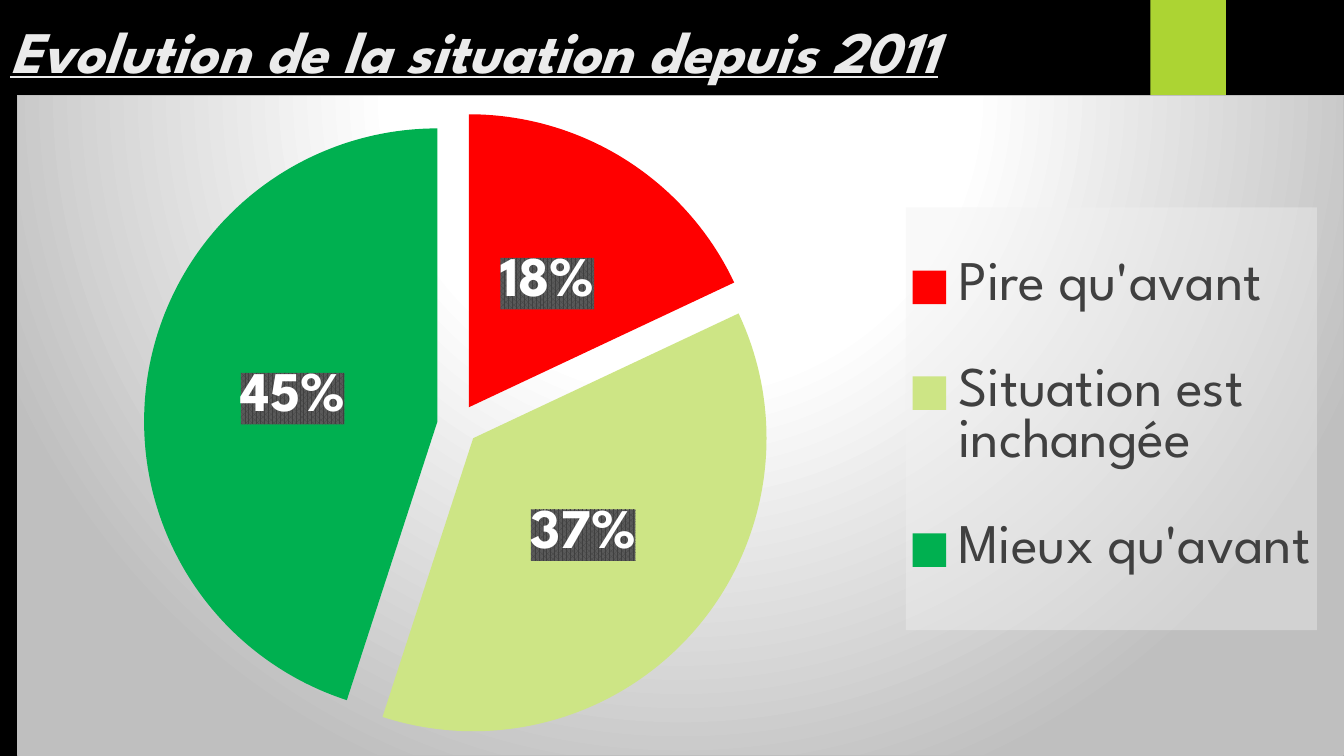
from lxml import etree
from pptx import Presentation
from pptx.chart.data import CategoryChartData
from pptx.dml.color import RGBColor
from pptx.enum.chart import XL_CHART_TYPE, XL_LABEL_POSITION, XL_LEGEND_POSITION
from pptx.enum.shapes import MSO_SHAPE
from pptx.enum.text import MSO_ANCHOR, PP_ALIGN
from pptx.oxml import parse_xml
from pptx.util import Inches, Pt

PIE, RECT = XL_CHART_TYPE.PIE, MSO_SHAPE.RECTANGLE
RIGHT, CENTER = XL_LEGEND_POSITION.RIGHT, XL_LABEL_POSITION.CENTER
LEFT, MIDDLE = PP_ALIGN.LEFT, MSO_ANCHOR.MIDDLE

# Content
TITLE = "Evolution de la situation depuis 2011"
SERIES = "Series 1"
SLICES = [
    ("Pire qu'avant", 18, "FF0000"),
    ("Situation est inchangée", 37, "CDE585"),
    ("Mieux qu'avant", 45, "00B050"),
]

# Theme
THEME = {
    "font": "League Spartan", "back": "000000", "title": "EBEBEB",
    "bar": "ACD433", "label": "FFFFFF", "legend": "404040",
    "big": 42, "text": 40,
}

# Places: slide boxes in inches, chart parts as shares of the chart
WIDE, HIGH = 13.33, 7.5
HEAD = (0, 0, WIDE, 1.14)
BAR = (11.41, 0, 0.75, 1.25)
CHART = (0.17, 0.94, WIDE - 0.17, HIGH - 0.94)
PLOT = (0.095, 0.024, 0.474, 0.95)
KEY = (0.67, 0.17, 0.31, 0.64)
BURST = 7

NS = ('xmlns:a="http://schemas.openxmlformats.org/drawingml/2006/main" '
      'xmlns:c="http://schemas.openxmlformats.org/drawingml/2006/chart"')


def box(area):
    return [Inches(n) for n in area]


def color(name):
    return RGBColor.from_string(THEME[name])


def style(font, name, size, bold=False):
    font.name, font.size, font.bold = THEME["font"], Pt(THEME[size]), bold
    font.color.rgb = color(name)


def solid(code, alpha=100):
    return (f'<a:solidFill><a:srgbClr val="{code}"><a:alpha val="{alpha * 1000}"/>'
            '</a:srgbClr></a:solidFill>')


def look(fill):
    return parse_xml(f'<c:spPr {NS}>{fill}</c:spPr>')


def layout(area, inner=False):
    node = parse_xml(f'<c:layout {NS}><c:manualLayout/></c:layout>')
    tags = [("layoutTarget", "inner")] if inner else []
    tags += [("xMode", "edge"), ("yMode", "edge"), *zip("xywh", area)]
    for tag, val in tags:
        part = etree.SubElement(node[0], node.tag.replace("layout", tag))
        part.set("val", str(val))
    return node


def place(parent, node, after):
    for old in parent.findall(node.tag):
        parent.remove(old)
    if after is None:
        parent.insert(0, node)
    else:
        after.addnext(node)


def add_head(slide):
    bar = slide.shapes.add_shape(RECT, *box(BAR))
    bar.shadow.inherit = False
    bar.fill.solid()
    bar.fill.fore_color.rgb = color("bar")
    bar.line.fill.background()

    head = slide.shapes.title
    head.left, head.top, head.width, head.height = box(HEAD)
    frame = head.text_frame
    frame.word_wrap, frame.vertical_anchor = True, MIDDLE
    frame.margin_bottom = Inches(0.2)
    para = frame.paragraphs[0]
    para.alignment = LEFT
    run = para.add_run()
    run.text = TITLE
    style(run.font, "title", "big", True)
    run.font.italic = run.font.underline = True


def add_pie(slide):
    data = CategoryChartData()
    names, values, _ = zip(*SLICES)
    data.categories = names
    data.add_series(SERIES, values)
    chart = slide.shapes.add_chart(PIE, *box(CHART), data).chart
    chart.has_title = False
    chart.font.name, chart.font.size = THEME["font"], Pt(10)
    plot = chart.plots[0]
    plot.vary_by_categories = True

    # Slices, pulled apart
    series = plot.series[0]
    for i, (_, _, code) in enumerate(SLICES):
        point = series.points[i].format
        point.fill.solid()
        point.fill.fore_color.rgb = RGBColor.from_string(code)
        point.line.fill.background()
    burst = parse_xml(f'<c:explosion {NS} val="{BURST}"/>')
    series._element.find("{*}dPt").addprevious(burst)

    # Percent labels on a dark pattern
    labels = series.data_labels
    labels.show_percentage, labels.show_value = True, False
    labels.number_format, labels.number_format_is_linked = "0%", False
    labels.position = CENTER
    style(labels.font, "label", "text", True)
    root = labels._element
    place(root, look('<a:pattFill prst="pct75"><a:fgClr><a:srgbClr val="404040"/>'
                     '</a:fgClr><a:bgClr><a:srgbClr val="595959"/></a:bgClr>'
                     '</a:pattFill>'), root.find("{*}numFmt"))

    # Legend
    chart.has_legend = True
    key = chart.legend
    key.position, key.include_in_layout = RIGHT, False
    style(key.font, "legend", "text")
    root = key._element
    place(root, layout(KEY), root.find("{*}legendPos"))
    place(root, look(solid("F2F2F2", 39)), root.find("{*}overlay"))

    # Plot place and chart backdrop
    space = chart._chartSpace
    place(space.chart.plotArea, layout(PLOT, True), None)
    stops = "".join(f'<a:gs pos="{at * 1000}"><a:srgbClr val="{code}"/></a:gs>'
                    for at, code in [(0, "FFFFFF"), (39, "FFFFFF"), (100, "BFBFBF")])
    place(space, look(f'<a:gradFill><a:gsLst>{stops}</a:gsLst><a:path path="circle">'
                      '<a:fillToRect l="50000" t="-80000" r="50000" b="180000"/>'
                      f'</a:path></a:gradFill><a:ln w="9525">{solid("BFBFBF")}</a:ln>'),
          space.chart)


def main():
    deck = Presentation()
    deck.slide_width, deck.slide_height = Inches(WIDE), Inches(HIGH)
    slide = deck.slides.add_slide(deck.slide_layouts[5])
    slide.background.fill.solid()
    slide.background.fill.fore_color.rgb = color("back")
    add_head(slide)
    add_pie(slide)
    deck.save("out.pptx")


if __name__ == "__main__":
    main()
